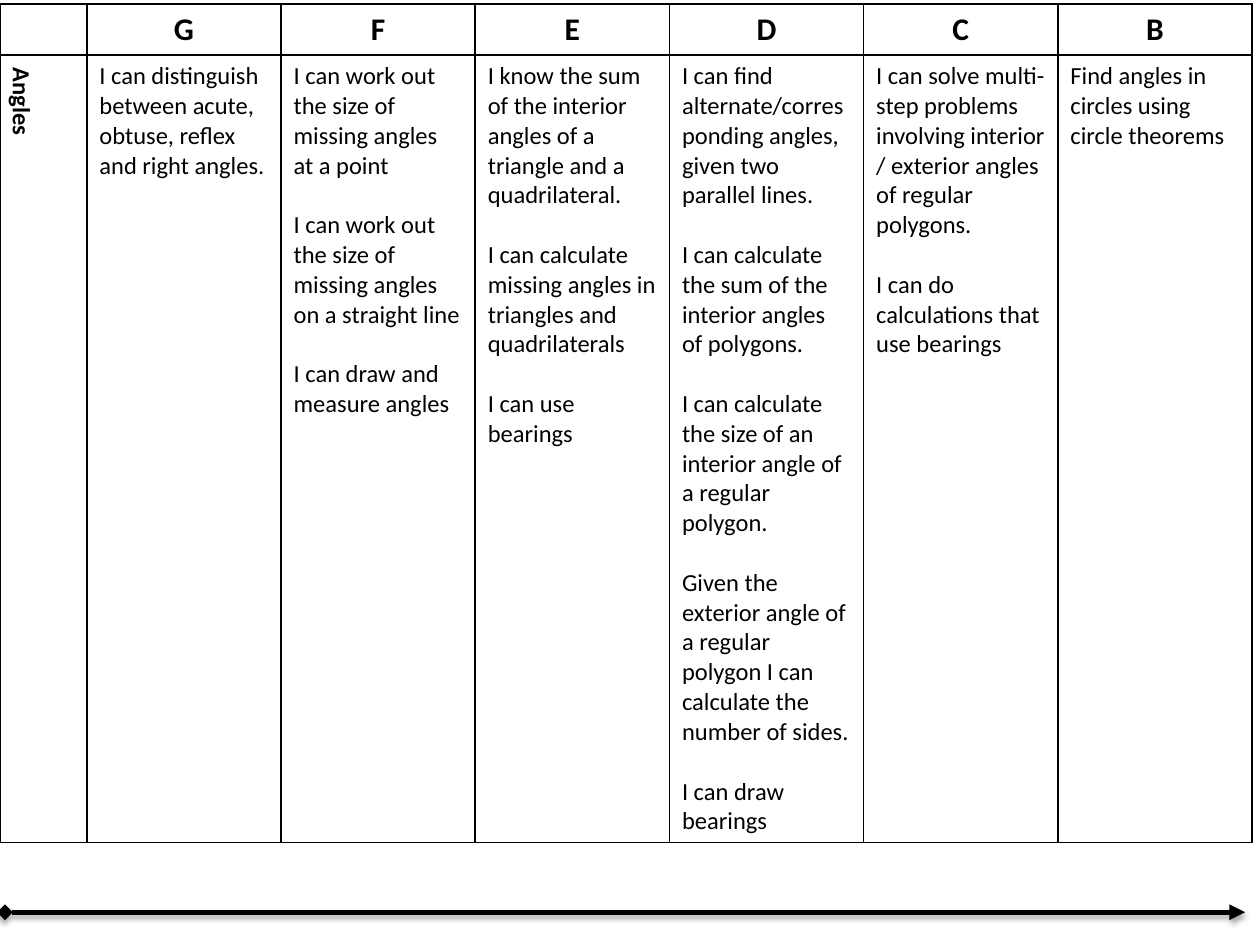
import pptx
import pptx.dml.color
import pptx.enum.shapes
import pptx.enum.text
import pptx.oxml
import pptx.oxml.ns
import pptx.util
from dataclasses import dataclass

Cm, Pt = pptx.util.Cm, pptx.util.Pt
PP_ALIGN = pptx.enum.text.PP_ALIGN
NS = pptx.oxml.ns.nsdecls("a")


@dataclass(frozen=True)
class Theme:
    font: str = "Calibri"
    ink: str = "000000"
    head_size: int = 18
    body_size: int = 14
    gap: int = 17
    border: float = 1
    arrow: float = 3


THEME = Theme()

GRADES = {
    "G": ["I can distinguish between acute, obtuse, reflex and right angles."],
    "F": ["I can work out the size of missing angles at a point",
          "I can work out the size of missing angles on a straight line",
          "I can draw and measure angles"],
    "E": ["I know the sum of the interior angles of a triangle and a quadrilateral.",
          "I can calculate missing angles in triangles and quadrilaterals",
          "I can use bearings"],
    "D": ["I can find alternate/corresponding angles, given two parallel lines.",
          "I can calculate the sum of the interior angles of polygons.",
          "I can calculate the size of an interior angle of a regular polygon.",
          "Given the exterior angle of a regular polygon I can calculate the number of sides.",
          "I can draw bearings"],
    "C": ["I can solve multi-step problems involving interior / exterior angles of regular polygons.",
          "I can do calculations that use bearings"],
    "B": ["Find angles in circles using circle theorems"],
}


def write(tf, lines, size=THEME.body_size, bold=False, align=PP_ALIGN.LEFT):
    """Write one paragraph per line, with even gaps between them."""
    for i, line in enumerate(lines):
        p = tf.paragraphs[0] if i == 0 else tf.add_paragraph()
        p.alignment = align
        p.space_before = Pt(THEME.gap if i else 0)
        r = p.add_run()
        r.text = line
        r.font.name, r.font.size, r.font.bold = THEME.font, Pt(size), bold
        r.font.color.rgb = pptx.dml.color.RGBColor.from_string(THEME.ink)


def frame_cell(cell):
    """Clear the fill and draw all four borders."""
    tc_pr = cell._tc.get_or_add_tcPr()
    for side in ("lnL", "lnR", "lnT", "lnB"):
        tc_pr.append(pptx.oxml.parse_xml(
            f'<a:{side} {NS} w="{Pt(THEME.border)}"><a:solidFill>'
            f'<a:srgbClr val="{THEME.ink}"/></a:solidFill></a:{side}>'))
    cell.fill.background()


def add_grade_table(slide, left, top, width, height):
    label_w, head_h = Cm(1.75), Cm(1.03)
    table = slide.shapes.add_table(2, len(GRADES) + 1, left, top, width, height).table
    table.first_row = table.horz_banding = False
    table.rows[0].height, table.rows[1].height = head_h, height - head_h
    for i, col in enumerate(table.columns):
        col.width = label_w if i == 0 else (width - label_w) // len(GRADES)
    for cell in table.iter_cells():
        frame_cell(cell)

    # Topic label, turned to read downwards
    topic = table.cell(1, 0)
    write(topic.text_frame, ["Angles"], bold=True)
    topic._tc.tcPr.set("vert", "vert")

    # One column per grade
    for i, (grade, skills) in enumerate(GRADES.items(), start=1):
        write(table.cell(0, i).text_frame, [grade], size=THEME.head_size,
              bold=True, align=PP_ALIGN.CENTER)
        write(table.cell(1, i).text_frame, skills)


def add_progress_arrow(slide, left, top, width):
    line = slide.shapes.add_connector(pptx.enum.shapes.MSO_CONNECTOR.STRAIGHT,
                                      left, top, left + width, top)
    line.line.width = Pt(THEME.arrow)
    line.line.color.rgb = pptx.dml.color.RGBColor.from_string(THEME.ink)
    ln = line.line._get_or_add_ln()
    for end, kind in (("headEnd", "diamond"), ("tailEnd", "triangle")):
        ln.append(pptx.oxml.parse_xml(f'<a:{end} {NS} type="{kind}"/>'))
    # Soft shadow straight below
    ln.getparent().append(pptx.oxml.parse_xml(
        f'<a:effectLst {NS}><a:outerShdw blurRad="{Pt(3.1)}" dist="{Pt(1.8)}" '
        f'dir="5400000" rotWithShape="0"><a:srgbClr val="{THEME.ink}">'
        f'<a:alpha val="35000"/></a:srgbClr></a:outerShdw></a:effectLst>'))


def main():
    prs = pptx.Presentation()
    prs.slide_width, prs.slide_height = Cm(25.4), Cm(19.05)
    slide = prs.slides.add_slide(prs.slide_layouts[6])
    add_progress_arrow(slide, Cm(0.1), Cm(18.39), Cm(25))
    add_grade_table(slide, Cm(0), Cm(0.08), Cm(25.24), Cm(16.9))
    prs.save("out.pptx")


if __name__ == "__main__":
    main()
